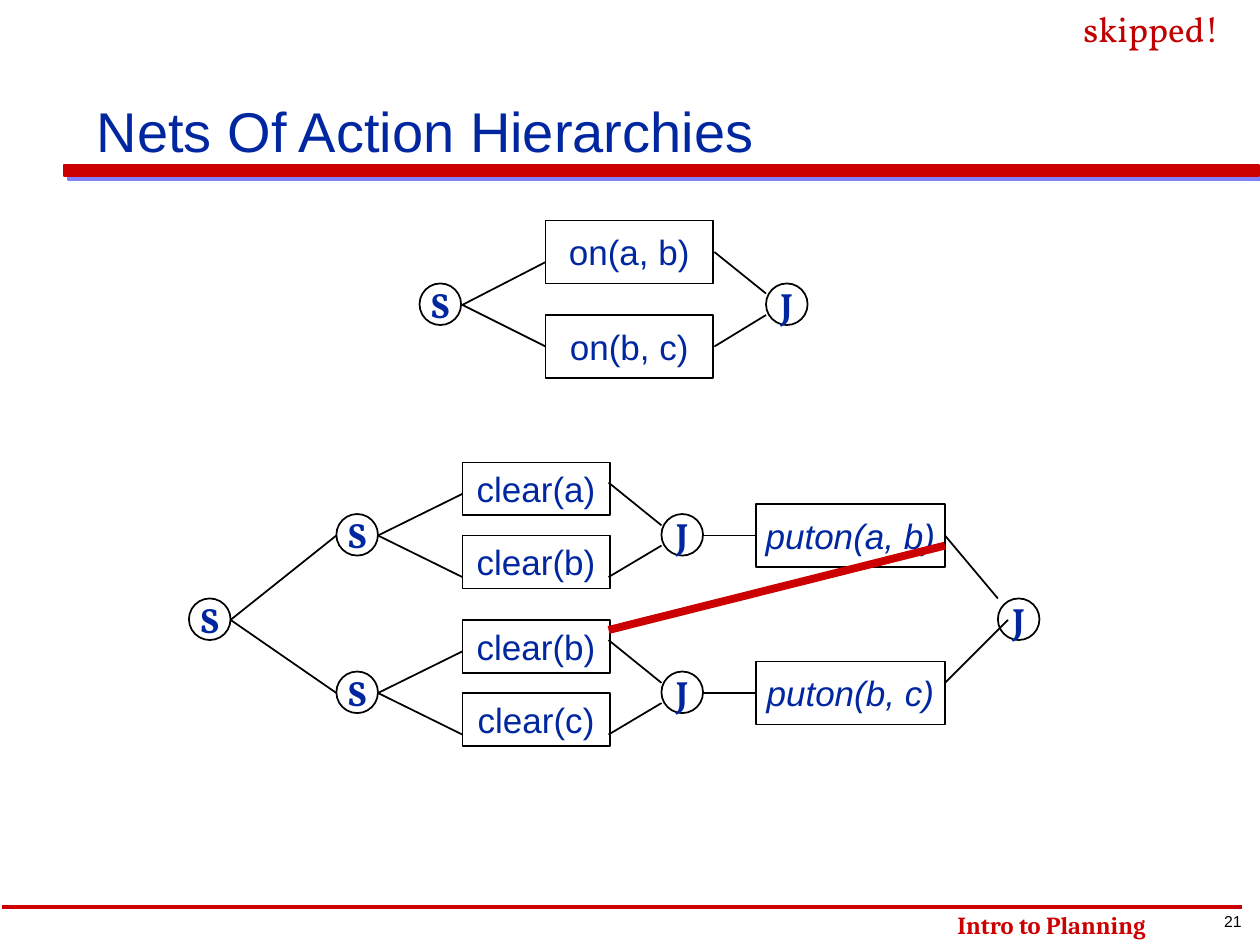
from lxml import etree
from pptx import Presentation
from pptx.dml.color import RGBColor
from pptx.enum.shapes import MSO_CONNECTOR as CONN, MSO_SHAPE as SHAPE
from pptx.enum.text import MSO_ANCHOR as ANCHOR, MSO_AUTO_SIZE as AUTO, PP_ALIGN as ALIGN
from pptx.oxml.ns import qn
from pptx.util import Inches, Pt

RED, BLUE, BLACK = "CC0000", "00279F", "000000"
NODE = 0.33

GOAL_BOXES = [("on(a, b)", 4.33, 1.75), ("on(b, c)", 4.33, 2.5)]
PUTON_BOXES = [("puton(a, b)", 6, 4), ("puton(b, c)", 6, 5.25)]
NODES = [("S", 3.33, 2.25), ("J", 6.08, 2.25), ("S", 1.5, 4.75), ("J", 7.92, 4.75)]
EDGES = [
    (3.67, 2.42, 4.33, 2.08), (3.67, 2.42, 4.33, 2.75),
    (5.67, 2, 6.08, 2.33), (5.67, 2.75, 6.08, 2.5),
    (1.83, 4.92, 2.67, 4.25), (1.83, 4.92, 2.67, 5.5),
    (7.5, 4.25, 7.92, 4.75), (7.5, 5.42, 8, 4.92),
]
SUBNETS = [(3.67, "clear(a)", "clear(b)"), (4.92, "clear(b)", "clear(c)")]
SUBNET_EDGES = [
    (3, 0.58, 3.67, 0.25), (3, 0.58, 3.67, 0.91),
    (4.83, 0.16, 5.25, 0.5), (4.83, 0.91, 5.25, 0.66),
    (5.58, 0.58, 6, 0.58),
]
TEXTS = [
    ("21", (9.61, 7.19, 0.35, 0.25), dict(size=9, color=BLACK, align=ALIGN.CENTER)),
    ("Intro to Planning", (7.5, 7.17, 2.33, 0.33),
     dict(size=14, font="Cambria", color=RED, bold=True, wrap=True)),
    ("Nets Of Action Hierarchies", (0.67, 0.09, 8.48, 1.26),
     dict(size=32, anchor=ANCHOR.BOTTOM, wrap=True, fit=AUTO.NONE)),
    ("skipped!", (8.5, 0.01, 1.28, 0.44), dict(font="Vollkorn", color="C00000")),
]


def rgb(value):
    return RGBColor.from_string(value)


def write(sp, text, size=20, font="Arial", color=BLUE, bold=False, italic=False,
          align=ALIGN.LEFT, anchor=ANCHOR.TOP, wrap=False, fit=AUTO.SHAPE_TO_FIT_TEXT):
    tf = sp.text_frame
    tf.word_wrap = wrap
    tf.auto_size = fit
    tf.vertical_anchor = anchor
    p = tf.paragraphs[0]
    p.alignment = align
    r = p.add_run()
    r.text = text
    r.font.size, r.font.name = Pt(size), font
    r.font.bold, r.font.italic = bold, italic
    r.font.color.rgb = rgb(color)


def add_shape(s, kind, x, y, w, h, fill=None, line=BLACK):
    sp = s.shapes.add_shape(kind, *map(Inches, (x, y, w, h)))
    sp.shadow.inherit = False
    if fill:
        sp.fill.solid()
        sp.fill.fore_color.rgb = rgb(fill)
    else:
        sp.fill.background()
    sp.line.color.rgb = rgb(line)
    sp.line.width = Pt(1)
    return sp


def add_label(s, kind, text, x, y, w, h, **fmt):
    sp = add_shape(s, kind, x, y, w, h)
    write(sp, text, align=ALIGN.CENTER, anchor=ANCHOR.MIDDLE, fit=AUTO.NONE, **fmt)


def add_box(s, text, x, y, w, h, **fmt):
    add_label(s, SHAPE.RECTANGLE, text, x, y, w, h, **fmt)


def add_node(s, text, x, y):
    add_label(s, SHAPE.OVAL, text, x, y, NODE, NODE, font="Vollkorn", bold=True)


def add_line(s, x1, y1, x2, y2, color=BLACK, width=1):
    c = s.shapes.add_connector(CONN.STRAIGHT, *map(Inches, (x1, y1, x2, y2)))
    c.line.color.rgb = rgb(color)
    c.line.width = Pt(width)
    etree.SubElement(c._element.spPr, qn("a:effectLst"))


def add_title_bar(s):
    bar = add_shape(s, SHAPE.RECTANGLE, 0.51, 1.31, 9.48, 0.09, fill=RED, line=RED)
    effects = bar._element.spPr.find(qn("a:effectLst"))
    shadow = etree.SubElement(effects, qn("a:outerShdw"), dist=str(Pt(2.8)),
                              dir=str(45 * 60000), algn="ctr", rotWithShape="0")
    etree.SubElement(shadow, qn("a:srgbClr"), val="8080FF")


def add_subnet(s, top, first, second):
    for text, y in ((first, top), (second, top + 0.58)):
        add_box(s, text, 3.67, y, 1.17, 0.42)
    add_node(s, "S", 2.67, top + 0.41)
    add_node(s, "J", 5.25, top + 0.41)
    for x1, y1, x2, y2 in SUBNET_EDGES:
        add_line(s, x1, top + y1, x2, top + y2)


def main():
    prs = Presentation()
    prs.slide_width, prs.slide_height = Inches(10), Inches(7.5)
    s = prs.slides.add_slide(prs.slide_layouts[6])
    add_title_bar(s)
    add_line(s, 9.86, 7.2, 0.02, 7.2, RED, 2)
    for text, place, fmt in TEXTS:
        write(s.shapes.add_textbox(*map(Inches, place)), text, **fmt)
    for text, x, y in GOAL_BOXES:
        add_box(s, text, x, y, 1.33, 0.5)
    for text, x, y in PUTON_BOXES:
        add_box(s, text, x, y, 1.5, 0.5, italic=True)
    for node in NODES:
        add_node(s, *node)
    for edge in EDGES:
        add_line(s, *edge)
    for subnet in SUBNETS:
        add_subnet(s, *subnet)
    add_line(s, 7.5, 4.33, 4.83, 5, RED, 4.5)
    prs.save("out.pptx")


if __name__ == "__main__":
    main()
